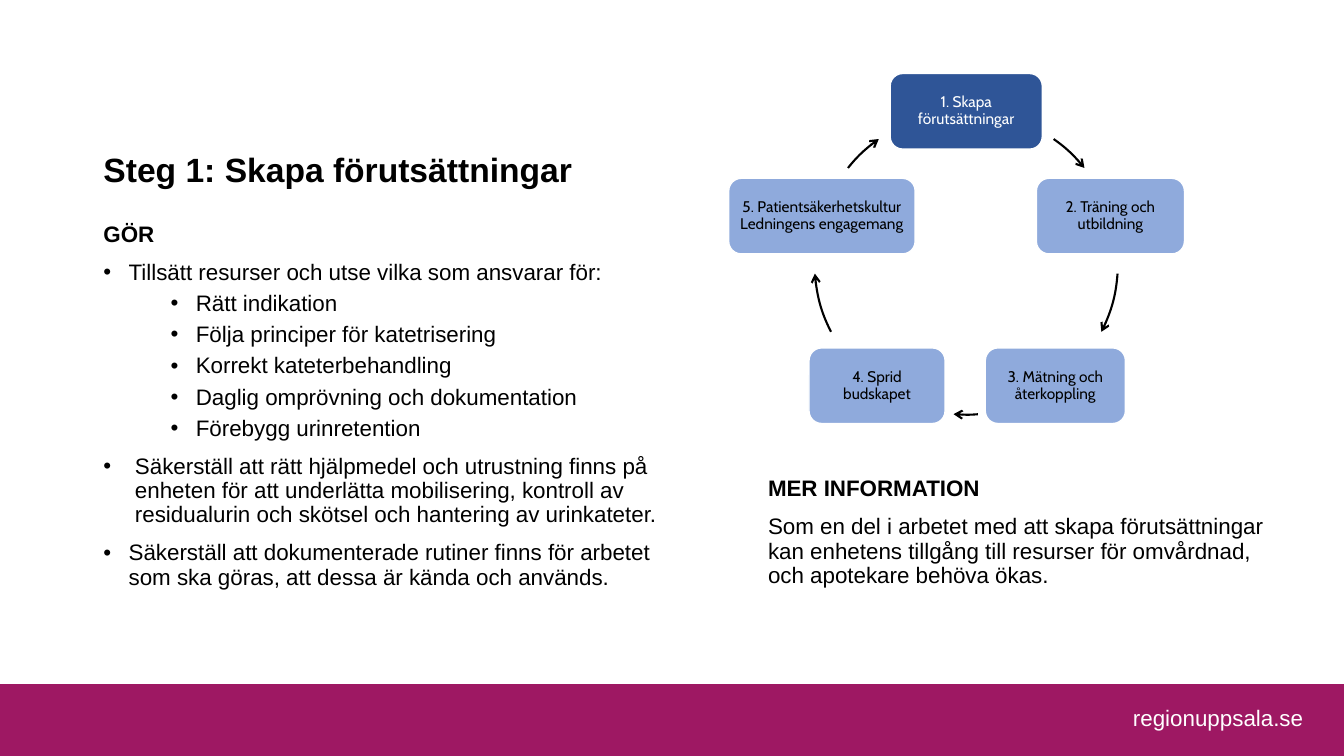
from math import cos, radians, sin, tan

from lxml import etree
from pptx import Presentation
from pptx.dml.color import RGBColor
from pptx.enum.shapes import MSO_SHAPE
from pptx.enum.text import MSO_ANCHOR, MSO_AUTO_SIZE, PP_ALIGN
from pptx.oxml.ns import qn
from pptx.util import Pt

RECT, ROUND = MSO_SHAPE.RECTANGLE, MSO_SHAPE.ROUNDED_RECTANGLE
TOP, MIDDLE = MSO_ANCHOR.TOP, MSO_ANCHOR.MIDDLE
LEFT, CENTER = PP_ALIGN.LEFT, PP_ALIGN.CENTER
NO_FIT = MSO_AUTO_SIZE.NONE

BLACK = RGBColor(0x00, 0x00, 0x00)
WHITE = RGBColor(0xFF, 0xFF, 0xFF)
PLUM = RGBColor(0x9E, 0x18, 0x63)
NAVY = RGBColor(0x2F, 0x55, 0x97)
SKY = RGBColor(0x8F, 0xAA, 0xDC)

WIDTH, HEIGHT = 960, 540
TITLE = "Steg 1: Skapa förutsättningar"
TASKS = [
    ("GÖR", 0, 0),
    ("Tillsätt resurser och utse vilka som ansvarar för:", 0, 18),
    ("Rätt indikation", 1, 18),
    ("Följa principer för katetrisering", 1, 18),
    ("Korrekt kateterbehandling", 1, 18),
    ("Daglig omprövning och dokumentation", 1, 18),
    ("Förebygg urinretention", 1, 18),
    ("Säkerställ att rätt hjälpmedel och utrustning finns på enheten för att "
     "underlätta mobilisering, kontroll av residualurin och skötsel och "
     "hantering av urinkateter.", 0, 22.5),
    ("Säkerställ att dokumenterade rutiner finns för arbetet som ska göras, "
     "att dessa är kända och används.", 0, 18),
]
MORE = [
    ("MER INFORMATION", 0, 0),
    ("Som en del i arbetet med att skapa förutsättningar kan enhetens tillgång "
     "till resurser för omvårdnad, och apotekare behöva ökas.", 0, 0),
]
STEPS = [
    ("1. Skapa förutsättningar", 108.7, NAVY, WHITE),
    ("2. Träning och utbildning", 105.8, SKY, BLACK),
    ("3. Mätning och återkoppling", 100.1, SKY, BLACK),
    ("4. Sprid budskapet", 97.2, SKY, BLACK),
    ("5. Patientsäkerhetskultur Ledningens engagemang", 133.2, SKY, BLACK),
]
ARCS = [(-54.8, -38.8), (4, 27), (85.6, 94.8), (153, 176), (218.8, 234.8)]
NODE = 54


def style(para, size, color, face="Arial", bold=False):
    """Format every run of a paragraph."""
    for run in para.runs:
        font = run.font
        font.name, font.size, font.bold = face, Pt(size), bold
        font.color.rgb = color


def place(shape, box):
    """Move a placeholder to a box and let its text start at the top."""
    shape.left, shape.top, shape.width, shape.height = map(Pt, box)
    frame = shape.text_frame
    frame.word_wrap, frame.auto_size = True, NO_FIT
    frame.vertical_anchor = TOP
    return frame


def indent(para, level, hang):
    """Set the level, indent and bullet of a paragraph."""
    para.level = level
    props = para._p.get_or_add_pPr()
    props.set("marL", str(Pt(hang + 48 * level)))
    props.set("indent", str(Pt(-hang)))
    if hang:
        etree.SubElement(props, qn("a:buFont")).set("typeface", "Arial")
        etree.SubElement(props, qn("a:buChar")).set("char", "•")
    else:
        etree.SubElement(props, qn("a:buNone"))


def heading(shape, box):
    """Fill the title."""
    frame = place(shape, box)
    frame.text = TITLE
    para = frame.paragraphs[0]
    para.alignment, para.line_spacing = LEFT, 0.9
    style(para, 24, BLACK, bold=True)


def body(shape, box, rows):
    """Fill a body placeholder with a bold heading and its paragraphs."""
    frame = place(shape, box)
    frame.text = "\n".join(text for text, _, _ in rows)
    for i, (para, row) in enumerate(zip(frame.paragraphs, rows)):
        _, level, hang = row
        indent(para, level, hang)
        para.line_spacing = 0.9
        para.space_before = Pt((5 if level else 10) if i else 0)
        style(para, 16, BLACK, bold=i == 0)


def block(slide, kind, box, fill):
    """Add a plain filled shape."""
    shape = slide.shapes.add_shape(kind, *map(Pt, box))
    shape.shadow.inherit = False
    shape.fill.solid()
    shape.fill.fore_color.rgb = fill
    return shape


def node(slide, box, text, fill, color):
    """Add one step of the cycle."""
    shape = block(slide, ROUND, box, fill)
    shape.line.color.rgb, shape.line.width = WHITE, Pt(1)
    frame = shape.text_frame
    frame.word_wrap, frame.vertical_anchor = True, MIDDLE
    frame.margin_left = frame.margin_right = Pt(3.6)
    frame.margin_top = frame.margin_bottom = Pt(3.6)
    frame.text = text
    para = frame.paragraphs[0]
    para.alignment, para.line_spacing = CENTER, 0.9
    style(para, 11, color, "Cabin")


def arc(slide, box, start, end):
    """Draw a curved arrow between two angles of the ring in the box."""
    left, top, size, _ = box
    pen = slide.shapes.build_freeform(Pt(left), Pt(top))
    pen.add_line_segments([(Pt(left + size), Pt(top + size))], close=False)
    shape = pen.convert_to_shape()
    shape.shadow.inherit = False
    shape.fill.background()
    shape.line.color.rgb, shape.line.width = BLACK, Pt(1.5)
    line = shape.line._get_or_add_ln()
    etree.SubElement(line, qn("a:tailEnd")).set("type", "arrow")

    first, last = radians(start), radians(end)
    pull = 4 / 3 * tan((last - first) / 4)
    curve = [(cos(first), sin(first)),
             (cos(first) - pull * sin(first), sin(first) + pull * cos(first)),
             (cos(last) + pull * sin(last), sin(last) - pull * cos(last)),
             (cos(last), sin(last))]
    track = next(shape._element.iter(qn("a:path")))
    for child in list(track):
        track.remove(child)
    for tag, points in (("a:moveTo", curve[:1]), ("a:cubicBezTo", curve[1:])):
        part = etree.SubElement(track, qn(tag))
        for x, y in points:
            spot = etree.SubElement(part, qn("a:pt"))
            spot.set("x", str(Pt(size / 2 * (1 + x))))
            spot.set("y", str(Pt(size / 2 * (1 + y))))


def cycle(slide, box):
    """Place the steps and arrows around the ring that fills the box."""
    left, top, size, _ = box
    radius = size / 2
    for i, (text, width, fill, color) in enumerate(STEPS):
        angle = radians(-90 + i * 360 / len(STEPS))
        x = left + radius * (1 + cos(angle))
        y = top + radius * (1 + sin(angle))
        node(slide, (x - width / 2, y - NODE / 2, width, NODE),
             text, fill, color)
        arc(slide, box, *ARCS[i])


def footer(slide, box):
    """Draw the bottom band with the web address."""
    left, top, width, height = box
    block(slide, RECT, box, PLUM).line.fill.background()
    label = slide.shapes.add_textbox(
        *map(Pt, (left + width - 168, top, 156.2, height - 3)))
    frame = label.text_frame
    frame.word_wrap, frame.vertical_anchor = True, MIDDLE
    frame.text = "regionuppsala.se"
    para = frame.paragraphs[0]
    para.alignment = CENTER
    style(para, 16, WHITE)


def main():
    """Build and save the slide."""
    deck = Presentation()
    deck.slide_width, deck.slide_height = Pt(WIDTH), Pt(HEIGHT)
    slide = deck.slides.add_slide(deck.slide_layouts[3])
    title, tasks, more = slide.placeholders
    footer(slide, (0, 488.7, WIDTH, 51.3))
    heading(title, (66.7, 106.2, 413.3, 62))
    body(tasks, (66.7, 155.7, 425.5, 331.2), TASKS)
    cycle(slide, (581.8, 79.5, 216.7, 216.7))
    body(more, (541.4, 337.4, 382.3, 220.3), MORE)
    deck.save("out.pptx")


if __name__ == "__main__":
    main()
